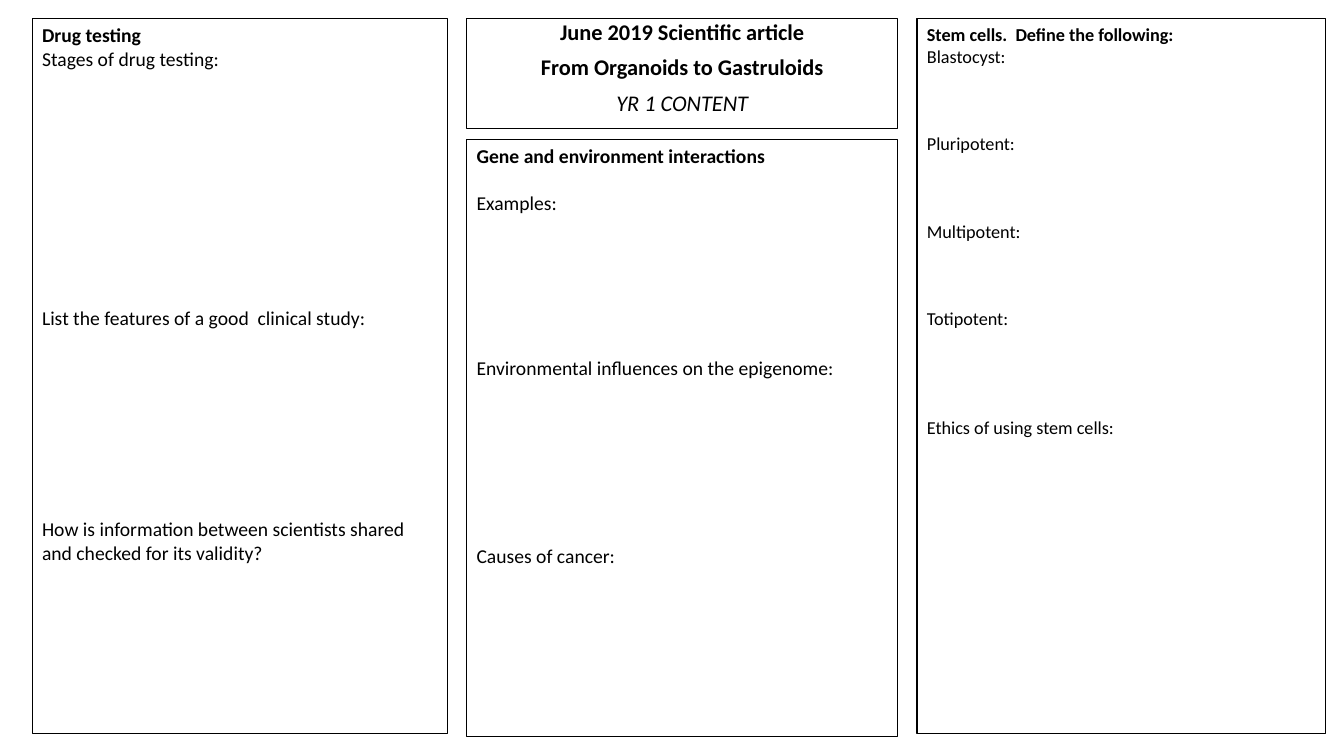
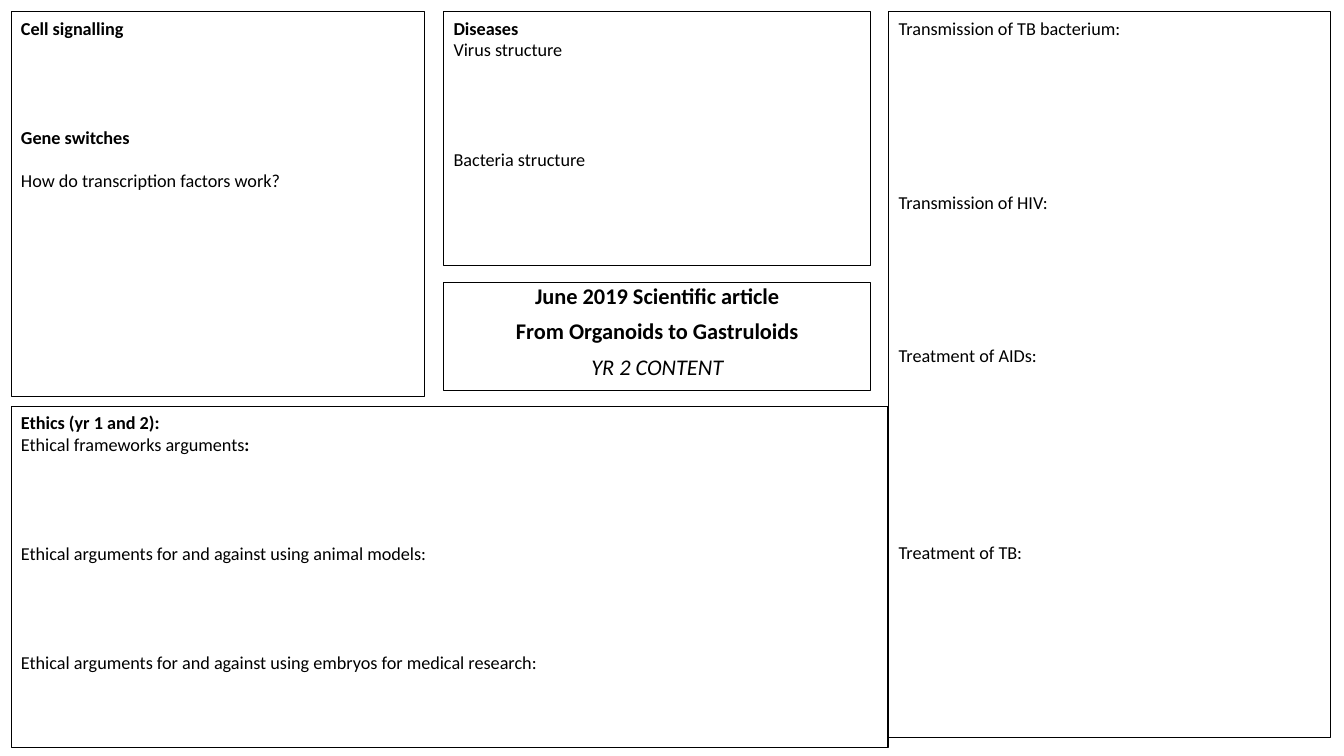
from pptx import Presentation
from pptx.dml.color import RGBColor
from pptx.enum.text import PP_ALIGN
from pptx.util import Cm, Pt

LEFT, CENTER = PP_ALIGN.LEFT, PP_ALIGN.CENTER
COLOURS = {"ink": "000000", "paper": "FFFFFF"}
FONT = "Calibri"
LINE_HEIGHT = 1.2  # one line of text, as a multiple of its font size


def add_box(page, place):
    """Add an outlined text box; place is left, top, width, height in cm."""
    box = page.shapes.add_textbox(*(Cm(length) for length in place))
    box.line.color.rgb = RGBColor.from_string(COLOURS["ink"])
    box.line.width = Pt(0.75)
    box.text_frame.word_wrap = True
    return box


def add_text(box, text, size=13, italic=False, align=LEFT, before=0, spacing=None):
    """Add one paragraph; the parts of text between asterisks are bold."""
    frame = box.text_frame
    para = frame.add_paragraph() if frame.text else frame.paragraphs[0]
    para.alignment = align
    para.space_before = Pt(before)
    para.line_spacing = spacing
    for index, part in enumerate(text.split("*")):
        if part:
            span = para.add_run()
            span.text = part
            span.font.name = FONT
            span.font.size = Pt(size)
            span.font.bold = index % 2 == 1
            span.font.italic = italic
            span.font.color.rgb = RGBColor.from_string(COLOURS["ink"])


# Each page: year, place of its title, and panels of (place, font size, prompts).
# A prompt is its text and the number of writing lines left free above it.
PAGES = [
    (1, (11.76, 0.46, 10.87, 2.77), [
        ((0.81, 0.46, 10.46, 18.03), 14, [
            ("*Drug testing*", 0),
            ("Stages of drug testing:", 0),
            ("List the features of a good  clinical study:", 10),
            ("How is information between scientists shared and checked for its validity?", 8),
        ]),
        ((23.11, 0.46, 10.29, 18.03), 13, [
            ("*Stem cells.  Define the following:*", 0),
            ("Blastocyst:", 0),
            ("Pluripotent:", 3),
            ("Multipotent:", 3),
            ("Totipotent:", 3),
            ("Ethics of using stem cells:", 4),
        ]),
        ((11.76, 3.51, 10.87, 15.04), 14, [
            ("*Gene and environment interactions*", 0),
            ("Examples:", 1),
            ("Environmental influences on the epigenome:", 6),
            ("Causes of cancer:", 7),
        ]),
    ]),
    (2, (11.18, 7.11, 10.77, 2.72), [
        ((11.18, 0.3, 10.77, 6.4), 13, [
            ("*Diseases*", 0),
            ("Virus structure", 0),
            ("Bacteria structure", 4),
        ]),
        ((0.28, 0.3, 10.41, 9.7), 13, [
            ("*Cell signalling*", 0),
            ("*Gene switches*", 4),
            ("How do transcription factors work?", 1),
        ]),
        ((22.4, 0.3, 11.13, 18.29), 13, [
            ("Transmission of TB bacterium:", 0),
            ("Transmission of HIV:", 7),
            ("Treatment of AIDs:", 6),
            ("Treatment of TB:", 8),
        ]),
        ((0.28, 10.24, 22.1, 8.59), 13, [
            ("*Ethics (yr 1 and 2):*", 0),
            ("Ethical frameworks arguments*:*", 0),
            ("Ethical arguments for and against using animal models:", 4),
            ("Ethical arguments for and against using embryos for medical research:", 4),
        ]),
    ]),
]

deck = Presentation()
deck.slide_width, deck.slide_height = Cm(33.87), Cm(19.05)

for year, title_place, panels in PAGES:
    page = deck.slides.add_slide(deck.slide_layouts[6])

    # Title
    title = add_box(page, title_place)
    title.fill.solid()
    title.fill.fore_color.rgb = RGBColor.from_string(COLOURS["paper"])
    title_format = {"size": 16, "align": CENTER, "before": 10, "spacing": 0.8}
    add_text(title, "*June 2019 Scientific article*", **title_format)
    add_text(title, "*From Organoids to Gastruloids*", **title_format)
    add_text(title, f"YR {year} CONTENT", italic=True, **title_format)

    # Panels with room for answers
    for place, size, prompts in panels:
        panel = add_box(page, place)
        for text, free_lines in prompts:
            add_text(panel, text, size=size, before=free_lines * size * LINE_HEIGHT)

deck.save("out.pptx")
